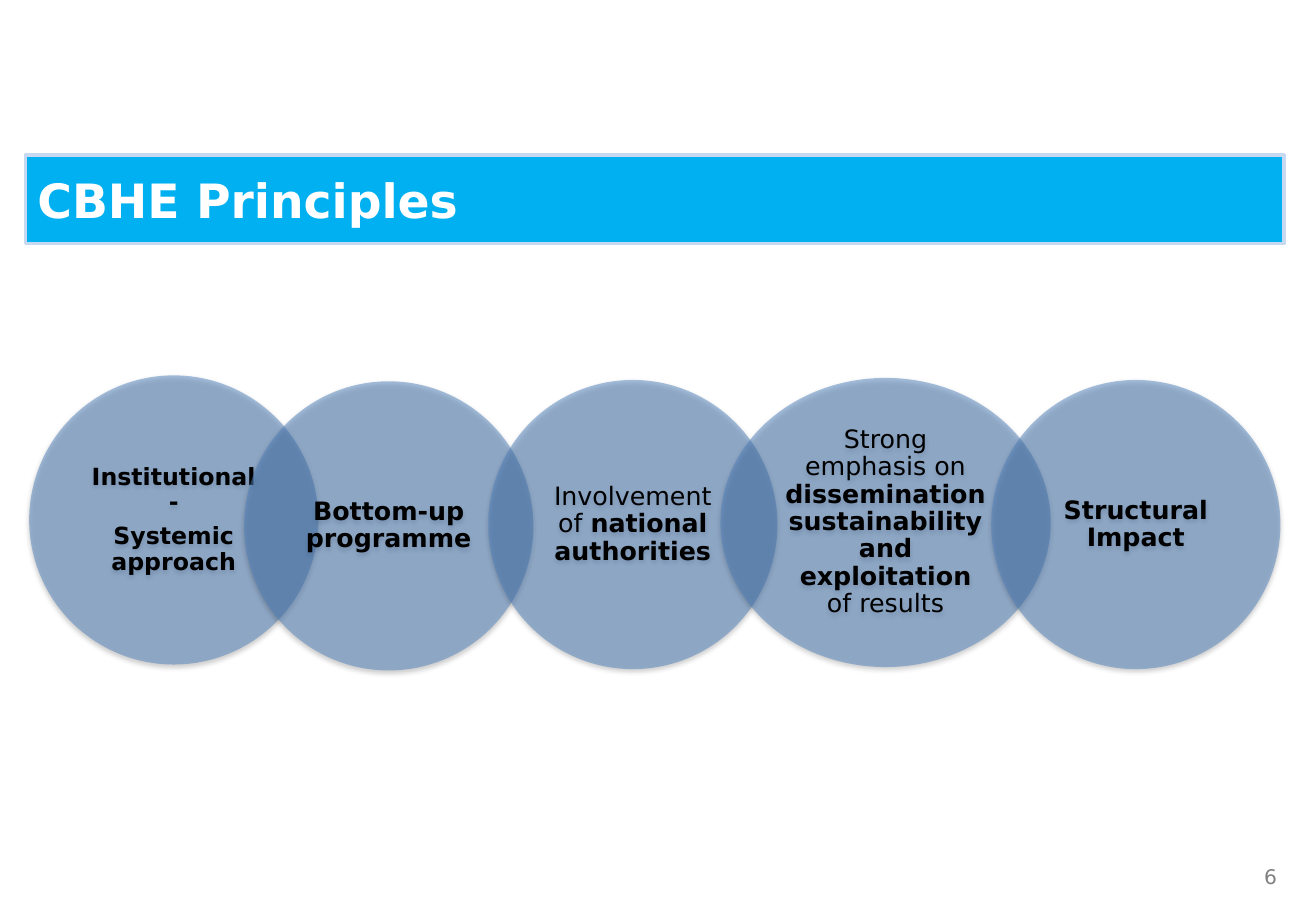
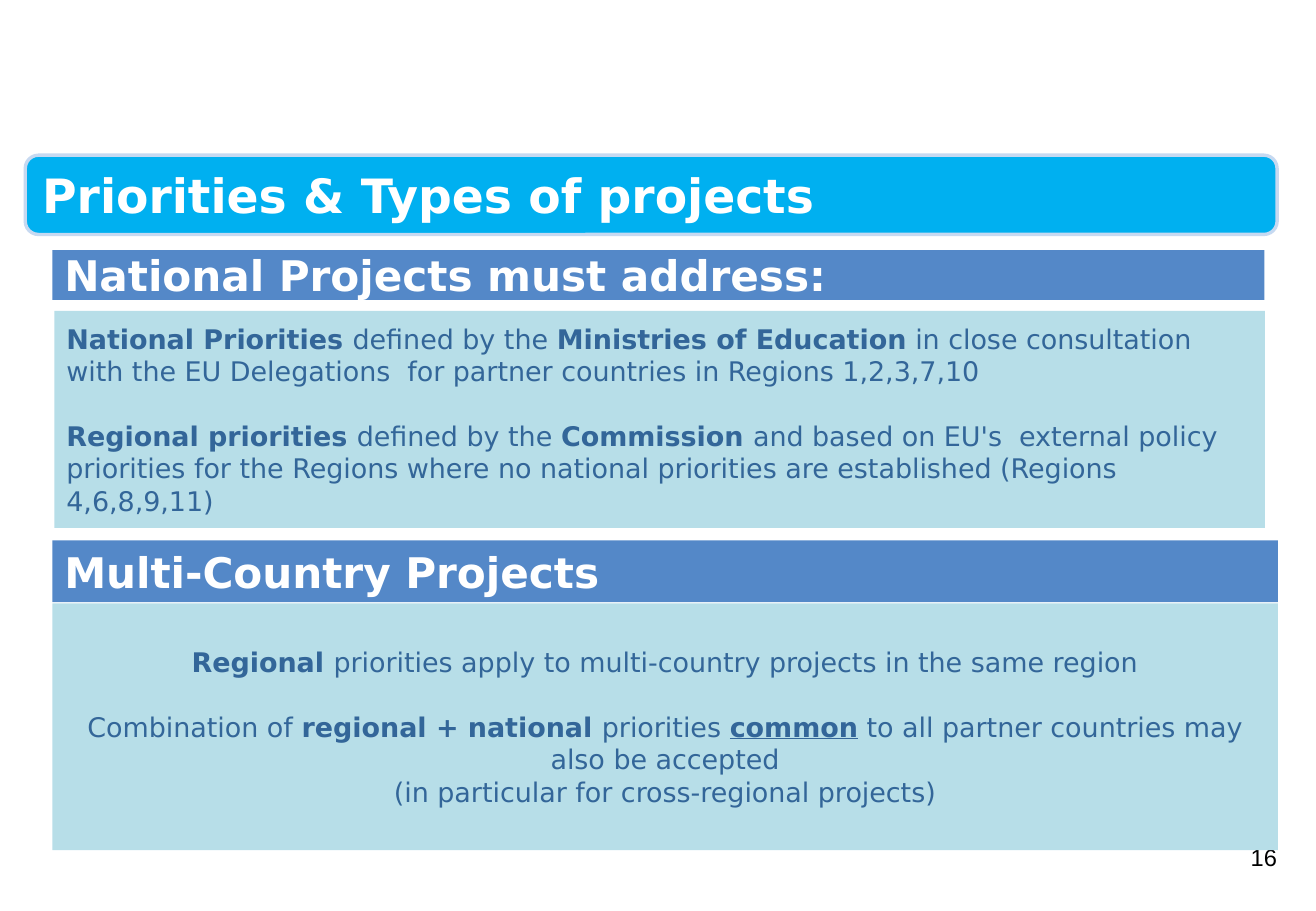
"""Build two slides on CBHE principles and project priorities."""
from lxml import etree
from pptx import Presentation
from pptx.dml.color import RGBColor
from pptx.enum import shapes, text
from pptx.oxml import ns
from pptx.util import Pt

SHAPE = shapes.MSO_SHAPE
ALIGN = text.PP_ALIGN
ANCHOR = text.MSO_ANCHOR
SANS = "DejaVu Sans"
WHITE, BLACK, GREY = "FFFFFF", "000000", "808080"
BAND, BAND_EDGE = "00B0F0", "C6D9F1"
HEADING, PANEL, PANEL_TEXT = "5488C8", "B7DEE8", "336699"
CIRCLE = "4F81BD"
rgb = RGBColor.from_string


def draw(page, kind, place, fill):
    """Add a filled preset shape without line or shadow."""
    shape = page.shapes.add_shape(kind, *map(Pt, place))
    shape.shadow.inherit = False
    shape.fill.solid()
    shape.fill.fore_color.rgb = rgb(fill)
    shape.line.fill.background()
    return shape


def write(shape, paragraphs, size, colour, align=ALIGN.LEFT, anchor=ANCHOR.MIDDLE, font=SANS):
    """Fill a shape with paragraphs of (text, style) spans; b is bold, u underlined."""
    frame = shape.text_frame
    frame.word_wrap = True
    frame.auto_size = text.MSO_AUTO_SIZE.NONE
    frame.vertical_anchor = anchor
    for index, spans in enumerate(paragraphs):
        para = frame.add_paragraph() if index else frame.paragraphs[0]
        para.alignment = align
        para.font.name = font
        para.font.size = Pt(size)
        para.font.color.rgb = rgb(colour)
        styles = {style for _, style in spans}
        if len(styles) == 1:
            para.font.bold = "b" in spans[0][1]
        for words, style in spans:
            span = para.add_run()
            span.text = words
            if len(styles) > 1:
                span.font.bold = "b" in style
            if "u" in style:
                span.font.underline = True
    return frame


deck = Presentation()
deck.slide_width, deck.slide_height = Pt(780), Pt(540)

pages = []
for title, kind, width, height, indent, number, number_top, size, colour, font in [
    ("CBHE Principles", SHAPE.RECTANGLE, 746, 52.5, 7.2, "6", 509, 12, GREY, SANS),
    ("Priorities & Types of projects", SHAPE.ROUNDED_RECTANGLE, 742, 47, 10, "16", 496, 14, BLACK, "Arial"),
]:
    page = deck.slides.add_slide(deck.slide_layouts[5])
    pages.append(page)
    place = (15, 92, width, height)
    band = draw(page, kind, place, BAND)
    band.line.color.rgb = rgb(BAND_EDGE)
    band.line.width = Pt(2)
    heading = page.shapes.title
    heading.element.addprevious(band.element)
    heading.left, heading.top, heading.width, heading.height = map(Pt, place)
    write(heading, [[(title, "b")]], 28, WHITE).margin_left = Pt(indent)
    box = page.shapes.add_textbox(Pt(582), Pt(number_top), Pt(182), Pt(37))
    write(box, [[(number, "")]], size, colour, ALIGN.RIGHT, ANCHOR.TOP, font)

principles, priorities = pages

for left, top, width, size, paragraphs in [
    (17.3, 222.5, 171.4, 14, [[("Institutional-", "b")], [("Systemic approach", "b")]]),
    (144.7, 226, 171.4, 15, [[("Bottom-up programme", "b")]]),
    (289.4, 225.2, 171.4, 15, [[("Involvement of ", ""), ("national authorities", "b")]]),
    (427, 224, 195.8, 15, [[("Strong emphasis on ", ""),
                            ("dissemination sustainability and exploitation ", "b"),
                            ("of results", "")]]),
    (587.5, 225.2, 171.4, 15, [[("Structural Impact", "b")]]),
]:
    circle = draw(principles, SHAPE.OVAL, (left, top, width, 171.4), CIRCLE)
    properties = circle.element.spPr
    tint = properties.find(ns.qn("a:solidFill"))[0]
    etree.SubElement(tint, ns.qn("a:alpha"), val="50000")
    effects = properties.find(ns.qn("a:effectLst"))
    shadow = etree.SubElement(effects, ns.qn("a:outerShdw"), blurRad=str(Pt(3.1)),
                              dist=str(Pt(1.6)), dir="5400000", rotWithShape="0")
    shade = etree.SubElement(shadow, ns.qn("a:srgbClr"), val=BLACK)
    etree.SubElement(shade, ns.qn("a:alpha"), val="38000")
    frame = write(circle, paragraphs, size, BLACK, ALIGN.CENTER)
    frame.margin_left = frame.margin_right = Pt(9.4)
    frame.margin_top = frame.margin_bottom = Pt(1.4)
    for para in frame.paragraphs:
        para.line_spacing = 0.9
        para.space_after = Pt(5)

for label, place in [
    ("National Projects must address:", (31, 148.3, 718.5, 29.5)),
    ("Multi-Country Projects", (31, 320.3, 726.5, 36.7)),
]:
    write(draw(priorities, SHAPE.RECTANGLE, place, HEADING), [[(label, "b")]], 25, WHITE)

for place, align, paragraphs in [
    ((32.3, 184.3, 717.5, 128.7), ALIGN.LEFT, [
        [("National Priorities ", "b"), ("defined by the ", ""), ("Ministries of Education", "b"),
         (" in close consultation with the EU Delegations  for partner countries in Regions 1,2,3,7,10", "")],
        [("Regional priorities ", "b"), ("defined by the ", ""), ("Commission ", "b"),
         ("and based on EU's  external policy priorities for the Regions where no national "
          "priorities are established (Regions 4,6,8,9,11)", "")],
    ]),
    ((31, 357.7, 726.5, 146.2), ALIGN.CENTER, [
        [("Regional ", "b"), ("priorities apply to multi-country projects in the same region", "")],
        [("Combination of ", ""), ("regional + national ", "b"), ("priorities ", ""), ("common", "bu"),
         (" to all partner countries may also be accepted", "")],
        [("(in particular for cross-regional projects)", "")],
    ]),
]:
    panel = draw(priorities, SHAPE.RECTANGLE, place, PANEL)
    frame = write(panel, paragraphs, 16, PANEL_TEXT, align)
    frame.paragraphs[1].space_before = Pt(19)

deck.save("out.pptx")
